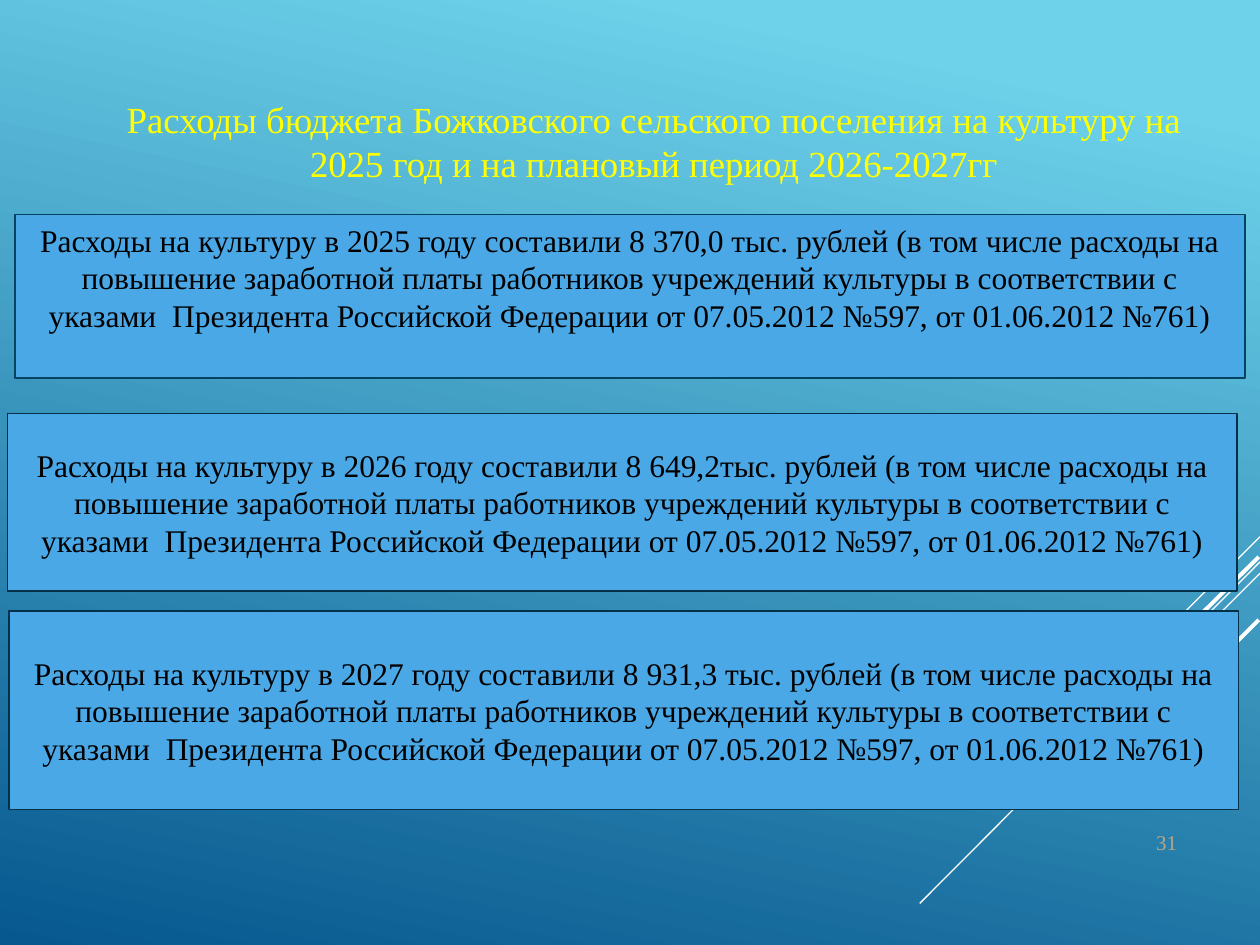
from dataclasses import dataclass

from lxml.etree import SubElement
from pptx import Presentation
from pptx.dml.color import RGBColor as RGB
from pptx.enum.shapes import MSO_CONNECTOR as CONNECTOR, MSO_SHAPE as SHAPE
from pptx.enum.text import MSO_ANCHOR as ANCHOR, PP_ALIGN as ALIGN
from pptx.oxml.ns import qn
from pptx.util import Pt


@dataclass(frozen=True)
class Theme:
    font: str = "Times New Roman"
    sky: RGB = RGB(0x6E, 0xD2, 0xEB)
    deep: RGB = RGB(0x06, 0x58, 0x8E)
    stripe: RGB = RGB(0xFF, 0xFF, 0xFF)
    title: RGB = RGB(0xFF, 0xFF, 0x00)
    number: RGB = RGB(0xB5, 0xA7, 0x88)
    body: RGB = RGB(0x00, 0x00, 0x00)
    panel: RGB = RGB(0x4A, 0xA8, 0xE7)
    first_border: RGB = RGB(0x05, 0x43, 0x61)
    border: RGB = RGB(0x04, 0x31, 0x48)
    title_size: int = 21
    body_size: int = 18
    number_size: int = 12


THEME = Theme()

# Start x, start y, end x, end y, width
STRIPES = [
    (720, 306.7, 660.2, 366.5, 0.75),
    (720, 321.1, 525.6, 516.2, 0.75),
    (720, 327.6, 596.2, 451.4, 0.75),
    (719.3, 318.2, 605.5, 431.3, 2.25),
    (719.3, 354.2, 637.2, 436.3, 2.25),
]

# Year, amount with its unit, box, border, anchor
PANELS = [
    (2025, "8 370,0 тыс.", (8.6, 122.6, 702.7, 93.6), THEME.first_border, ANCHOR.TOP),
    (2026, "8 649,2тыс.", (4.3, 236.2, 702.7, 101.5), THEME.border, ANCHOR.MIDDLE),
    (2027, "8 931,3 тыс.", (5, 349.2, 702.7, 113.4), THEME.border, ANCHOR.MIDDLE),
]


def paint_background(slide):
    fill = slide.background.fill
    fill.gradient()
    fill.gradient_angle = 258
    for stop, position, color in zip(fill.gradient_stops, (0.1, 1), (THEME.sky, THEME.deep)):
        stop.position = position
        stop.color.rgb = color


def add_stripe(slide, start_x, start_y, end_x, end_y, width):
    ends = [Pt(value) for value in (start_x, start_y, end_x, end_y)]
    connector = slide.shapes.add_connector(CONNECTOR.STRAIGHT, *ends)
    connector.line.color.rgb = THEME.stripe
    connector.line.width = Pt(width)
    SubElement(connector.element.spPr, qn("a:effectLst"))


def write_text(shape, text, size, color, align=ALIGN.CENTER, anchor=ANCHOR.TOP):
    frame = shape.text_frame
    frame.word_wrap = True
    frame.vertical_anchor = anchor
    paragraph = frame.paragraphs[0]
    paragraph.text = text
    paragraph.alignment = align
    paragraph.font.name = THEME.font
    paragraph.font.size = Pt(size)
    paragraph.font.color.rgb = color


def add_label(slide, box, *text_style):
    shape = slide.shapes.add_textbox(*map(Pt, box))
    write_text(shape, *text_style)


def add_panel(slide, year, amount, box, border, anchor):
    shape = slide.shapes.add_shape(SHAPE.RECTANGLE, *map(Pt, box))
    shape.shadow.inherit = False
    shape.fill.solid()
    shape.fill.fore_color.rgb = THEME.panel
    shape.line.color.rgb = border
    shape.line.width = Pt(1)
    text = (
        f"Расходы на культуру в {year} году составили {amount} рублей "
        "(в том числе расходы на повышение заработной платы работников "
        "учреждений культуры в соответствии с указами  Президента "
        "Российской Федерации от 07.05.2012 №597, от 01.06.2012 №761)"
    )
    write_text(shape, text, THEME.body_size, THEME.body, anchor=anchor)


def main():
    presentation = Presentation()
    presentation.slide_width = Pt(720)
    presentation.slide_height = Pt(540)
    slide = presentation.slides.add_slide(presentation.slide_layouts[6])

    paint_background(slide)
    for stripe in STRIPES:
        add_stripe(slide, *stripe)
    add_label(slide, (612, 439.2, 67.7, 52.6), "31",
              THEME.number_size, THEME.number, ALIGN.RIGHT, ANCHOR.BOTTOM)
    add_label(slide, (64.8, 51.8, 617.8, 58.3),
              "Расходы бюджета Божковского сельского поселения на культуру "
              "на 2025 год и на плановый период 2026-2027гг",
              THEME.title_size, THEME.title)
    for panel in PANELS:
        add_panel(slide, *panel)

    presentation.save("out.pptx")


if __name__ == "__main__":
    main()
